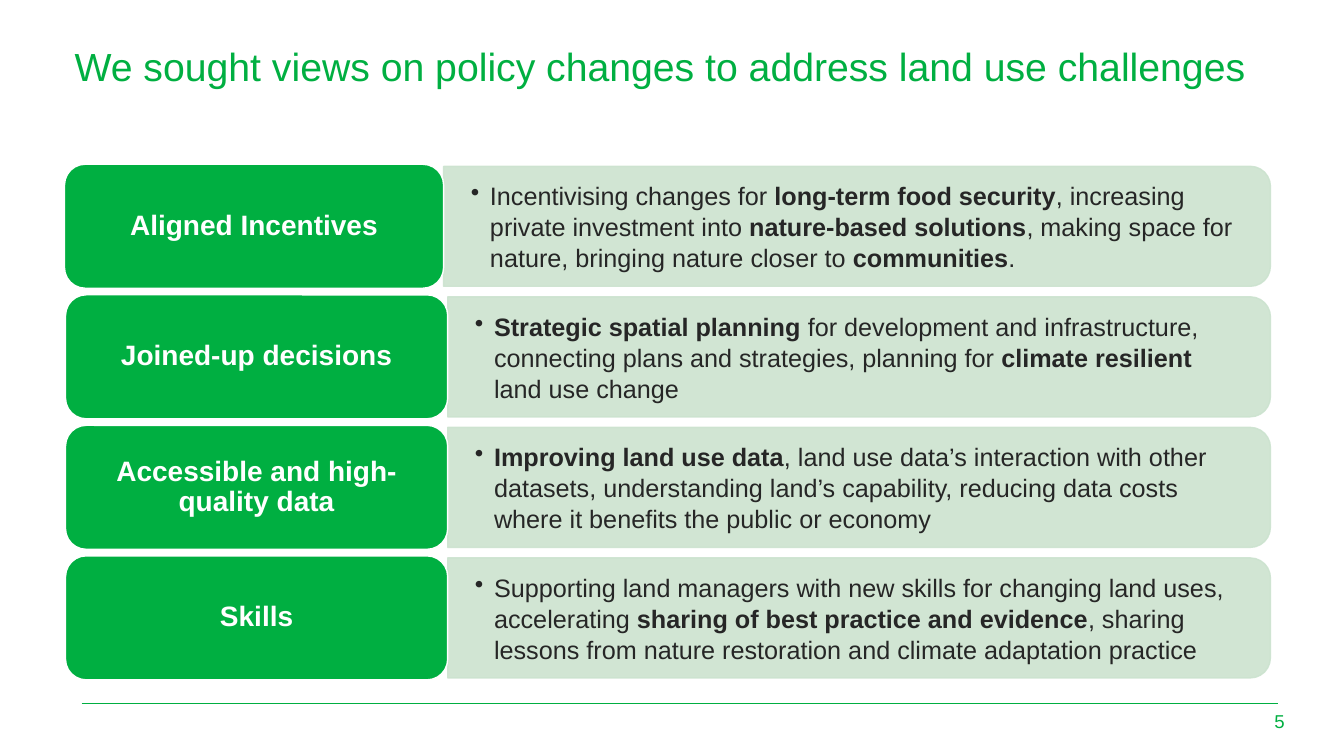
"""Build a slide that pairs four policy themes with the views sought on each."""
from dataclasses import dataclass

from lxml import etree
from pptx import Presentation
from pptx import util as u
from pptx.dml.color import RGBColor
from pptx.enum import shapes, text
from pptx.oxml.ns import qn


@dataclass(frozen=True)
class Theme:
    font: str = "Arial"
    green: str = "00AF41"
    pale: str = "CCE3CF"
    ink: str = "262626"
    white: str = "FFFFFF"
    title_size: float = 28
    label_size: float = 20
    body_size: float = 18
    number_size: float = 13.3


@dataclass(frozen=True)
class PolicyRow:
    label: str
    detail: str
    label_left: float = 0.65
    split: float = 4.44


THEME = Theme()
RIGHT_EDGE = 12.6
FIRST_TOP, ROW_PITCH = 1.63, 1.295
LABEL_HEIGHT, PANEL_HEIGHT = 1.23, 1.19

ROWS = [
    PolicyRow("Aligned Incentives",
              "Incentivising changes for *long-term food security*, increasing private "
              "investment into *nature-based solutions*, making space for nature, "
              "bringing nature closer to *communities*.", 0.64, 4.4),
    PolicyRow("Joined-up decisions",
              "*Strategic spatial planning *for development and infrastructure, connecting "
              "plans and strategies, planning for *climate resilient *land use change"),
    PolicyRow("Accessible and high-quality data",
              "*Improving land use data*, land use data’s interaction with other datasets, "
              "understanding land’s capability, reducing data costs where it benefits the "
              "public or economy"),
    PolicyRow("Skills",
              "Supporting land managers with new skills for changing land uses, accelerating "
              "*sharing of best practice and evidence*, sharing lessons from nature "
              "restoration and climate adaptation practice"),
]


def place(shape, left: float, top: float, width: float, height: float) -> None:
    shape.left, shape.top = u.Inches(left), u.Inches(top)
    shape.width, shape.height = u.Inches(width), u.Inches(height)


def write_text(box, content: str, *, size: float, color: str, bold: bool = False,
               align=text.PP_ALIGN.LEFT, anchor=text.MSO_ANCHOR.MIDDLE,
               spacing: float = 1.0, bullet: bool = False,
               inset: tuple[float, float] = (0.1, 0.05)) -> None:
    """Fill a box with one paragraph, where asterisks enclose bold words."""
    frame = box.text_frame
    frame.word_wrap = True
    frame.auto_size = text.MSO_AUTO_SIZE.NONE
    frame.vertical_anchor = anchor
    frame.margin_left = frame.margin_right = u.Inches(inset[0])
    frame.margin_top = frame.margin_bottom = u.Inches(inset[1])
    para = frame.paragraphs[0]
    if bullet:
        props = para._p.get_or_add_pPr()
        props.set("marL", str(u.Inches(0.19)))
        props.set("indent", str(-u.Inches(0.19)))
        etree.SubElement(props, qn("a:buChar")).set("char", "•")
    para.alignment = align
    para.line_spacing = spacing
    for index, words in enumerate(content.split("*")):
        if words:
            span = para.add_run()
            span.text = words
            span.font.name = THEME.font
            span.font.size = u.Pt(size)
            span.font.bold = bold or index % 2 == 1
            span.font.color.rgb = RGBColor.from_string(color)


def add_block(page, kind, fill: str, line: str, opacity: int = 100):
    block = page.shapes.add_shape(kind, 0, 0, 0, 0)
    block.shadow.inherit = False
    block.fill.solid()
    block.fill.fore_color.rgb = RGBColor.from_string(fill)
    block.line.color.rgb = RGBColor.from_string(line)
    block.line.width = u.Pt(1)
    if opacity < 100:
        for color in block._element.spPr.iter(qn("a:srgbClr")):
            etree.SubElement(color, qn("a:alpha")).set("val", str(opacity * 1000))
    return block


def add_row(page, row: PolicyRow, top: float) -> None:
    width = RIGHT_EDGE - row.split
    middle = top + LABEL_HEIGHT / 2
    panel = add_block(page, shapes.MSO_SHAPE.ROUND_2_SAME_RECTANGLE,
                      THEME.pale, THEME.pale, opacity=90)
    place(panel, row.split + (width - PANEL_HEIGHT) / 2, middle - width / 2,
          PANEL_HEIGHT, width)
    panel.rotation = 90

    detail = page.shapes.add_textbox(0, 0, 0, 0)
    place(detail, row.split, middle - 0.535, width - 0.06, 1.07)
    write_text(detail, row.detail, size=THEME.body_size, color=THEME.ink,
               spacing=1.03, bullet=True, inset=(0.27, 0.14))

    label = add_block(page, shapes.MSO_SHAPE.ROUNDED_RECTANGLE, THEME.green, THEME.white)
    place(label, row.label_left, top, row.split - row.label_left, LABEL_HEIGHT)
    write_text(label, row.label, size=THEME.label_size, color=THEME.white, bold=True,
               align=text.PP_ALIGN.CENTER, spacing=0.9, inset=(0.08, 0.04))


def add_footer(page, number: str) -> None:
    rule = page.shapes.add_connector(shapes.MSO_CONNECTOR.STRAIGHT, u.Inches(0.81),
                                     u.Inches(6.98), u.Inches(12.68), u.Inches(6.98))
    rule.line.color.rgb = RGBColor.from_string(THEME.green)
    rule.line.width = u.Pt(0.5)
    etree.SubElement(rule._element.spPr, qn("a:effectLst"))
    box = page.shapes.add_textbox(0, 0, 0, 0)
    place(box, 12.24, 6.95, 0.6, 0.4)
    write_text(box, number, size=THEME.number_size, color=THEME.green,
               align=text.PP_ALIGN.RIGHT)


def main() -> None:
    deck = Presentation()
    deck.slide_width, deck.slide_height = u.Inches(13.33), u.Inches(7.5)
    page = deck.slides.add_slide(deck.slide_layouts.get_by_name("Title Only"))
    title = page.shapes.title
    place(title, 0.64, 0.42, 12.05, 0.53)
    write_text(title, "We sought views on policy changes to address land use challenges",
               size=THEME.title_size, color=THEME.green, spacing=0.9,
               anchor=text.MSO_ANCHOR.TOP)
    add_footer(page, "5")
    for index, row in enumerate(ROWS):
        add_row(page, row, FIRST_TOP + index * ROW_PITCH)
    deck.save("out.pptx")


if __name__ == "__main__":
    main()
